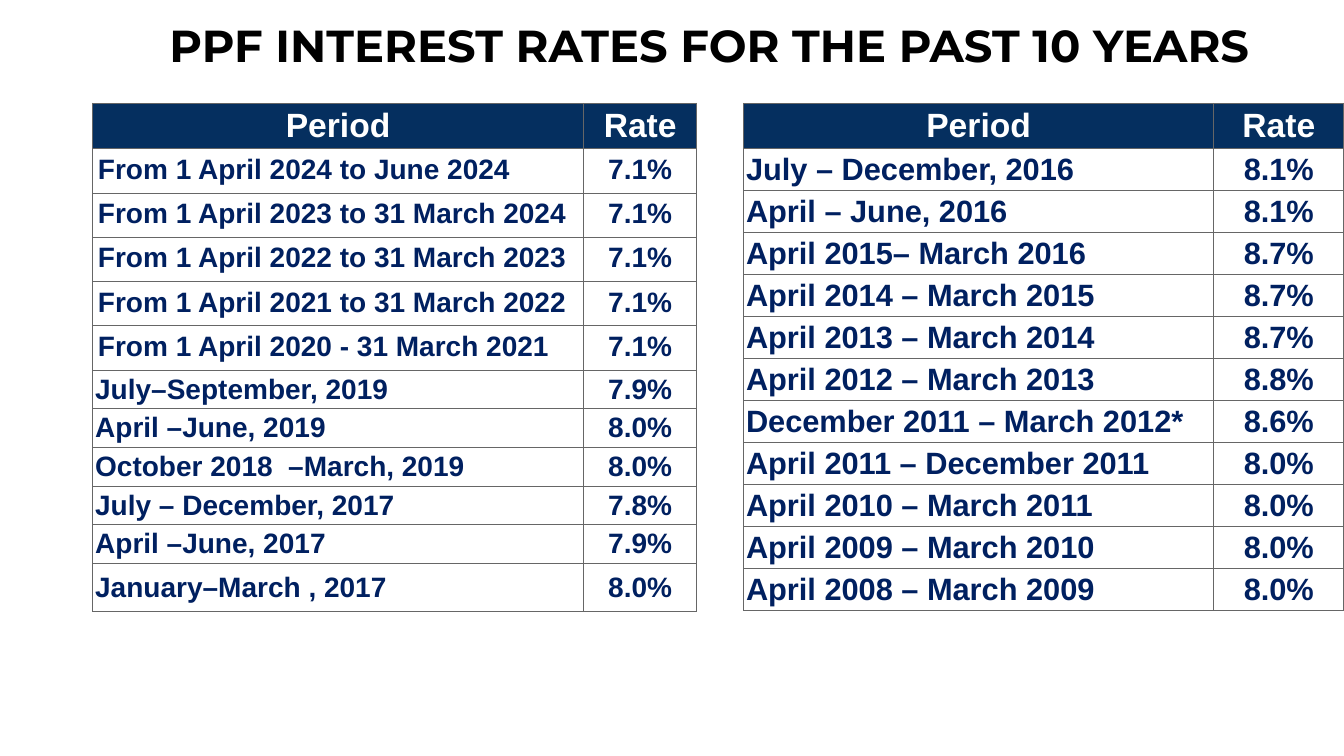
from lxml import etree
from pptx import Presentation
from pptx.dml.color import RGBColor
from pptx.enum import text as tx
from pptx.oxml import ns
from pptx.util import Pt

NAVY, BLUE, WHITE, GREY, BLACK = "052F5F", "002060", "FFFFFF", "666666", "000000"
MID, TOP = tx.MSO_ANCHOR.MIDDLE, tx.MSO_ANCHOR.TOP
LEFT, CENTER = tx.PP_ALIGN.LEFT, tx.PP_ALIGN.CENTER

HEAD = ("Period", "Rate")
RECENT = [
    ("From 1 April 2024 to June 2024", "7.1%"),
    ("From 1 April 2023 to 31 March 2024", "7.1%"),
    ("From 1 April 2022 to 31 March 2023", "7.1%"),
    ("From 1 April 2021 to 31 March 2022", "7.1%"),
    ("From 1 April 2020 - 31 March 2021", "7.1%"),
    ("July–September, 2019", "7.9%"),
    ("April –June, 2019", "8.0%"),
    ("October 2018  –March, 2019", "8.0%"),
    ("July – December, 2017", "7.8%"),
    ("April –June, 2017", "7.9%"),
    ("January–March , 2017", "8.0%"),
]
OLDER = [
    ("July – December, 2016", "8.1%"),
    ("April – June, 2016", "8.1%"),
    ("April 2015– March 2016", "8.7%"),
    ("April 2014 – March 2015", "8.7%"),
    ("April 2013 – March 2014", "8.7%"),
    ("April 2012 – March 2013", "8.8%"),
    ("December 2011 – March 2012*", "8.6%"),
    ("April 2011 – December 2011", "8.0%"),
    ("April 2010 – March 2011", "8.0%"),
    ("April 2009 – March 2010", "8.0%"),
    ("April 2008 – March 2009", "8.0%"),
]


def color(code):
    return RGBColor.from_string(code)


def write(frame, words, size=20, font="Arial", ink=BLUE, align=LEFT, space=None):
    frame.word_wrap = True
    para = frame.paragraphs[0]
    para.alignment = align
    para.line_spacing = space
    run = para.add_run()
    run.text = words
    run.font.size = Pt(size)
    run.font.name = font
    run.font.bold = True
    run.font.color.rgb = color(ink)


def title(slide, words):
    box = slide.shapes.add_textbox(Pt(54), Pt(0), Pt(905.8), Pt(104.4))
    frame = box.text_frame
    frame.vertical_anchor = MID
    frame.margin_bottom = Pt(39)
    write(frame, words, size=32, font="Montserrat", ink=BLACK, align=CENTER, space=0.9)


def border(cell):
    props = cell._tc.get_or_add_tcPr()
    for side in ("a:lnL", "a:lnR", "a:lnT", "a:lnB"):
        line = etree.SubElement(props, ns.qn(side), w=str(Pt(0.75)))
        fill = etree.SubElement(line, ns.qn("a:solidFill"))
        etree.SubElement(fill, ns.qn("a:srgbClr"), val=GREY)


def style(cell, fill, inset, anchor):
    border(cell)
    cell.fill.solid()
    cell.fill.fore_color.rgb = color(fill)
    cell.margin_left = cell.margin_right = Pt(inset)
    cell.margin_top = cell.margin_bottom = Pt(inset)
    cell.vertical_anchor = anchor


def table(slide, left, widths, heights, rows, size, loose=0):
    data = [HEAD] + rows
    frame = slide.shapes.add_table(
        len(data), len(HEAD), Pt(left), Pt(73.8), Pt(sum(widths)), Pt(sum(heights)))
    grid = frame.table
    for col, width in zip(grid.columns, widths):
        col.width = Pt(width)
    for r, (row, height) in enumerate(zip(data, heights)):
        grid.rows[r].height = Pt(height)
        top = r == 0
        wide = 0 < r <= loose
        for c, words in enumerate(row):
            cell = grid.cell(r, c)
            style(cell, NAVY if top else WHITE, 3.8 if wide else 1.8, TOP if wide else MID)
            write(cell.text_frame, words, size=24 if top else size,
                  ink=WHITE if top else BLUE, align=CENTER if top or c else LEFT)


def main():
    deck = Presentation()
    deck.slide_width, deck.slide_height = Pt(960), Pt(540)
    slide = deck.slides.add_slide(deck.slide_layouts[6])
    title(slide, "PPF INTEREST RATES FOR THE PAST 10 YEARS")
    table(slide, 66.2, (350.7, 80.8), [31] + [30.2] * 5 + [26.1] * 5 + [34.2],
          RECENT, 20, loose=5)
    table(slide, 531.1, (335.9, 92.9), [31.4] + [29] * 11, OLDER, 22)
    deck.save("out.pptx")


if __name__ == "__main__":
    main()
